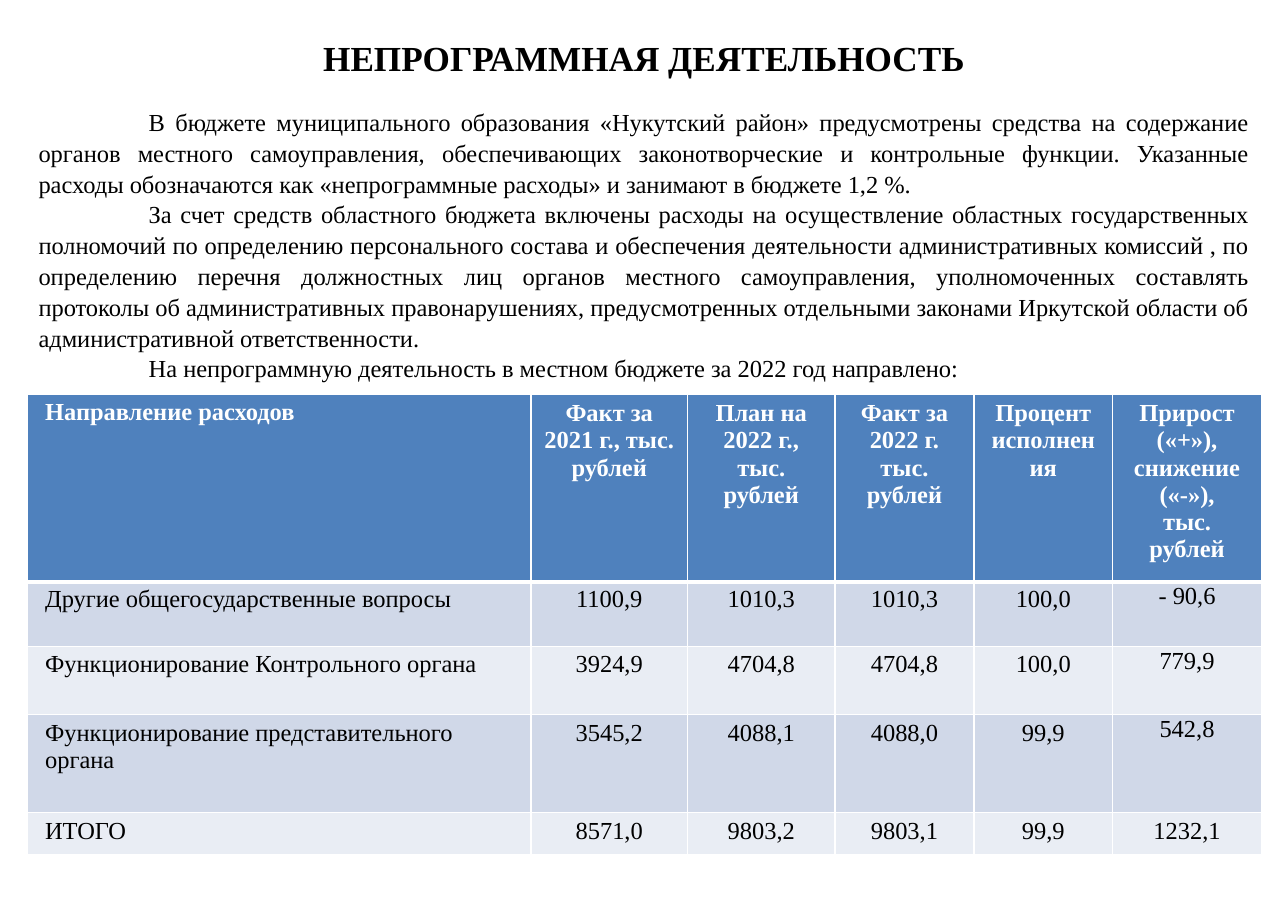
from lxml import etree
from pptx import Presentation
from pptx.dml.color import RGBColor
from pptx.enum.text import MSO_ANCHOR, MSO_AUTO_SIZE, PP_ALIGN
from pptx.oxml.ns import qn
from pptx.util import Inches, Pt

LEFT, CENTER, JUSTIFY = PP_ALIGN.LEFT, PP_ALIGN.CENTER, PP_ALIGN.JUSTIFY
MIDDLE, TOP = MSO_ANCHOR.MIDDLE, MSO_ANCHOR.TOP
NO_FIT = MSO_AUTO_SIZE.NONE
WIDTH, HEIGHT = 11.69, 8.27
FONT = "Times New Roman"
COLORS = {"text": "000000", "white": "FFFFFF", "header": "4F81BD",
          "odd": "D0D8E8", "even": "E9EDF4"}
COLUMNS = [4.57, 1.42, 1.34, 1.26, 1.26, 1.35]
ROWS = [1.69, 0.59, 0.62, 0.89, 0.38]
WIDE, NORMAL, TIGHT = (0.16, 0.04), (0.1, 0.05), (0.01, 0.01)

TITLE = "НЕПРОГРАММНАЯ ДЕЯТЕЛЬНОСТЬ"
INTRO = [
    "В бюджете муниципального образования «Нукутский район» предусмотрены "
    "средства на содержание органов местного самоуправления, обеспечивающих "
    "законотворческие и контрольные функции. Указанные расходы обозначаются "
    "как «непрограммные расходы» и занимают в бюджете 1,2 %.",
    "За счет средств областного бюджета включены расходы на осуществление "
    "областных государственных полномочий по определению персонального состава "
    "и обеспечения деятельности административных комиссий , по определению "
    "перечня должностных лиц органов местного самоуправления, уполномоченных "
    "составлять протоколы об административных правонарушениях, предусмотренных "
    "отдельными законами Иркутской области об административной ответственности.",
    "На непрограммную деятельность в местном бюджете за 2022 год направлено:",
]
EXPENSES = [
    ["Направление расходов", "Факт за 2021 г., тыс. рублей",
     "План на 2022 г.,\nтыс. рублей", "Факт за 2022 г.\nтыс. рублей",
     "Процент исполнения", "Прирост («+»), снижение («-»),\nтыс. рублей"],
    ["Другие общегосударственные вопросы",
     "1100,9", "1010,3", "1010,3", "100,0", "- 90,6"],
    ["Функционирование Контрольного органа",
     "3924,9", "4704,8", "4704,8", "100,0", "779,9"],
    ["Функционирование представительного органа",
     "3545,2", "4088,1", "4088,0", "99,9", "542,8"],
    ["ИТОГО", "8571,0", "9803,2", "9803,1", "99,9", "1232,1"],
]


def write(frame, text, size=16, bold=False, color="text", align=LEFT,
          indent=0, spacing=1.0):
    """Fill a text frame, one paragraph for each line of the text."""
    frame.word_wrap = True
    for number, line in enumerate(text.split("\n")):
        para = frame.add_paragraph() if number else frame.paragraphs[0]
        para.alignment = align
        para.line_spacing = spacing
        para.space_before = para.space_after = Pt(0)
        if indent:
            properties = para._p.get_or_add_pPr()
            properties.set("marL", "0")
            properties.set("indent", str(Inches(indent)))
        span = para.add_run()
        span.text = line
        span.font.name = FONT
        span.font.size = Pt(size)
        span.font.bold = bold
        span.font.color.rgb = RGBColor.from_string(COLORS[color])


def set_margins(holder, side, upright):
    """Set the inner margins of a text frame or a table cell."""
    holder.margin_left = holder.margin_right = Inches(side)
    holder.margin_top = holder.margin_bottom = Inches(upright)


def add_borders(cell, widths):
    """Draw white cell borders from a dict of side and width in points."""
    properties = cell._tc.get_or_add_tcPr()
    for side, width in widths.items():
        line = etree.SubElement(properties, qn(f"a:ln{side}"), w=str(Pt(width)))
        fill = etree.SubElement(line, qn("a:solidFill"))
        etree.SubElement(fill, qn("a:srgbClr"), val=COLORS["white"])


def add_title(page):
    """Place and format the title placeholder."""
    title = page.shapes.title
    title.left, title.top = Inches(0.88), Inches(0.26)
    title.width, title.height = Inches(9.94), Inches(0.52)
    frame = title.text_frame
    frame.auto_size = NO_FIT
    frame.vertical_anchor = MIDDLE
    write(frame, TITLE, size=23, bold=True, align=CENTER)


def add_intro(page):
    """Add the justified introduction above the table."""
    box = page.shapes.add_textbox(Inches(0.24), Inches(0.9),
                                  Inches(11.21), Inches(2.81))
    set_margins(box.text_frame, 0.11, 0.06)
    write(box.text_frame, "\n".join(INTRO), align=JUSTIFY, indent=1,
          spacing=1.05)


def cell_margins(row, column):
    """Choose the side and upright margins of a table cell."""
    if row == 0 and column:
        return NORMAL
    if column == len(COLUMNS) - 1 and row < len(ROWS) - 1:
        return TIGHT
    return WIDE


def add_expenses(page):
    """Add the table of expenses."""
    table = page.shapes.add_table(len(ROWS), len(COLUMNS), Inches(0.25),
                                  Inches(3.58), Inches(sum(COLUMNS)),
                                  Inches(sum(ROWS))).table
    table.first_row = table.horz_banding = False
    for column, width in zip(table.columns, COLUMNS):
        column.width = Inches(width)
    for row, height in zip(table.rows, ROWS):
        row.height = Inches(height)
    for r, texts in enumerate(EXPENSES):
        is_header = r == 0
        fill = "header" if is_header else "odd" if r % 2 else "even"
        borders = {"L": 1, "R": 1, "T": 3 if r == 1 else 1,
                   "B": 3 if is_header else 1}
        for c, text in enumerate(texts):
            cell = table.cell(r, c)
            add_borders(cell, borders)
            cell.fill.solid()
            cell.fill.fore_color.rgb = RGBColor.from_string(COLORS[fill])
            cell.vertical_anchor = TOP
            set_margins(cell, *cell_margins(r, c))
            write(cell.text_frame, text, bold=is_header,
                  color="white" if is_header else "text",
                  align=CENTER if c else LEFT)


def main():
    """Build the slide and save the deck."""
    deck = Presentation()
    deck.slide_width, deck.slide_height = Inches(WIDTH), Inches(HEIGHT)
    page = deck.slides.add_slide(deck.slide_layouts[5])
    add_title(page)
    add_intro(page)
    add_expenses(page)
    deck.save("out.pptx")


if __name__ == "__main__":
    main()
